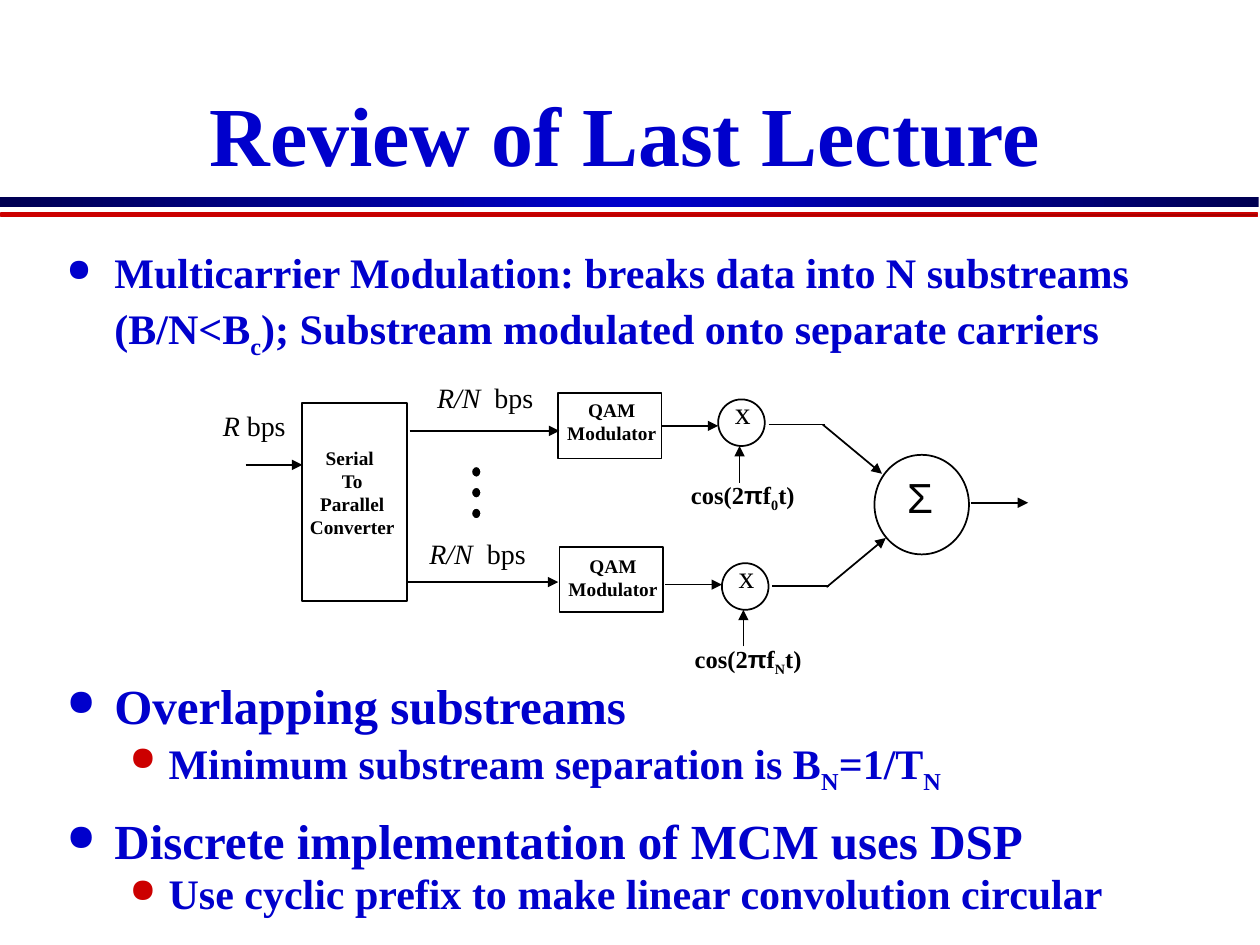
from typing import NamedTuple

from lxml import etree
from pptx import Presentation
from pptx import util as u
from pptx.dml.color import RGBColor
from pptx.enum import shapes, text
from pptx.oxml import ns

I = u.Inches
COLORS = {"blue": "0000CC", "navy": "000052", "red": "CC0000",
          "dark_red": "A30000", "black": "000000", "white": "FFFFFF"}
SERIF, SANS = "Times New Roman", "Arial"
RECT, OVAL = shapes.MSO_SHAPE.RECTANGLE, shapes.MSO_SHAPE.OVAL
CENTER = text.PP_ALIGN.CENTER


class Run(NamedTuple):
    text: str
    sub: bool = False
    italic: bool = False
    font: str = SERIF


class Para(NamedTuple):
    runs: list[Run]
    size: float
    color: str = "black"
    bold: bool = False
    fmt: dict = {}
    bullet: tuple | None = None  # colour, size %, left margin, hanging indent


class Arrow(NamedTuple):
    x1: float
    y1: float
    x2: float
    y2: float
    head: bool = True


def rgb(name: str) -> RGBColor:
    return RGBColor.from_string(COLORS[name])


def add(parent, tag: str, **attrs):
    return etree.SubElement(parent, ns.qn(tag), attrs)


def draw_shape(s, kind, x, y, w, h, line=None, fill=None):
    sp = s.shapes.add_shape(kind, I(x), I(y), I(w), I(h))
    sp.shadow.inherit = False
    if fill:
        sp.fill.solid()
        sp.fill.fore_color.rgb = rgb(fill)
    else:
        sp.fill.background()
    if line:
        sp.line.color.rgb = rgb(line)
        sp.line.width = u.Pt(1)
    else:
        sp.line.fill.background()
    return sp


def fill_gradient(sp, names: list[str]) -> None:
    sp.fill.gradient()
    sp.fill.gradient_angle = 0
    stops = sp.element.spPr.find(".//" + ns.qn("a:gsLst"))
    for gs in list(stops):
        stops.remove(gs)
    for i, name in enumerate(names):
        gs = add(stops, "a:gs", pos=str(100000 * i // (len(names) - 1)))
        add(gs, "a:srgbClr", val=COLORS[name])


def draw_text(s, x, y, w, h, paras: list[Para], wrap=False, anchor=text.MSO_ANCHOR.TOP) -> None:
    tf = s.shapes.add_textbox(I(x), I(y), I(w), I(h)).text_frame
    tf.word_wrap, tf.vertical_anchor = wrap, anchor
    for i, para in enumerate(paras):
        p = tf.paragraphs[0] if i == 0 else tf.add_paragraph()
        for key, value in para.fmt.items():
            setattr(p, key, value)
        if para.bullet:
            color, percent, margin, hang = para.bullet
            pPr = p._p.get_or_add_pPr()
            pPr.set("marL", str(I(margin)))
            pPr.set("indent", str(-I(hang)))
            add(add(pPr, "a:buClr"), "a:srgbClr", val=COLORS[color])
            add(pPr, "a:buSzPct", val=str(percent * 1000))
            add(pPr, "a:buChar", char="●")
        for run in para.runs:
            r = p.add_run()
            r.text = run.text
            fmt = {"name": run.font, "size": u.Pt(para.size),
                   "bold": para.bold, "italic": run.italic}
            for key, value in fmt.items():
                setattr(r.font, key, value)
            r.font.color.rgb = rgb(para.color)
            if run.sub:
                r._r.get_or_add_rPr().set("baseline", "-25000")


def draw_arrow(s, a: Arrow):
    c = s.shapes.add_connector(shapes.MSO_CONNECTOR.STRAIGHT,
                               I(a.x1), I(a.y1), I(a.x2), I(a.y2))
    c.line.color.rgb = rgb("black")
    c.line.width = u.Pt(1)
    if a.head:
        add(c.line._get_or_add_ln(), "a:tailEnd", type="triangle")
    add(c._element.spPr, "a:effectLst")
    return c


def labels(lines: list[str]) -> list[Para]:
    return [Para([Run(t)], 11, bold=True, fmt={"alignment": CENTER}) for t in lines]


def topic(runs: list[Run], size: float, spacing: float, before: float = 0) -> Para:
    fmt = {"line_spacing": spacing, "space_before": u.Pt(before)}
    return Para(runs, size, "blue", True, fmt, ("blue", 75, 0.38, 0.38))


def subtopic(runs: list[Run]) -> Para:
    fmt = {"line_spacing": 0.8, "space_before": u.Pt(4.8), "level": 1}
    return Para(runs, 24, "blue", True, fmt, ("red", 80, 0.81, 0.31))


def main() -> None:
    prs = Presentation()
    prs.slide_width, prs.slide_height = I(10), I(7.5)
    s = prs.slides.add_slide(prs.slide_layouts[6])

    # Double rule under the title
    fill_gradient(draw_shape(s, RECT, 0, 1.56, 9.99, 0.08), ["navy", "blue", "navy"])
    fill_gradient(draw_shape(s, RECT, 0.01, 1.69, 9.97, 0.03, "red"), ["red", "dark_red"])

    # Title and bullet text
    title = Para([Run("Review of Last Lecture")], 48, "blue", True,
                 {"alignment": CENTER, "line_spacing": 0.8})
    draw_text(s, 0.67, 0.25, 8.58, 1.25, [title], True, text.MSO_ANCHOR.BOTTOM)
    draw_text(s, 0.43, 1.87, 9.08, 1.05, [
        topic([Run("Multicarrier Modulation: breaks data into N substreams (B/N<B"),
               Run("c", sub=True),
               Run("); Substream modulated onto separate carriers")], 24, 1.1)], True)
    draw_text(s, 0.43, 5.22, 9.08, 2.1, [
        topic([Run("Overlapping substreams")], 28, 1.2),
        subtopic([Run("Minimum substream separation is B"), Run("N", sub=True),
                  Run("=1/T"), Run("N", sub=True)]),
        topic([Run("Discrete implementation of MCM uses DSP")], 28, 1.2, 5.6),
        subtopic([Run("Use cyclic prefix to make linear convolution circular")])], True)

    # Serial to parallel converter
    draw_shape(s, RECT, 2.4, 3.2, 0.83, 1.57, "black")
    draw_text(s, 2.34, 3.49, 0.91, 1.2, labels(["Serial ", "To", "Parallel", "Converter"]))

    # Ellipsis between the branches
    for i in range(3):
        draw_shape(s, OVAL, 3.74, 3.7 + i * 0.165, 0.08, 0.09, "white", "black")

    # QAM modulators
    modulators = []
    for x, y, label_y in [(4.43, 3.12, 3.11), (4.44, 4.34, 4.35)]:
        modulators.append(draw_shape(s, RECT, x, y, 0.82, 0.52, "black"))
        draw_text(s, x - 0.05, label_y, 0.95, 0.67, labels(["QAM", "Modulator"]))

    # Mixers with their carriers
    for x, y, index in [(5.7, 3.17, "0"), (5.73, 4.47, "N")]:
        draw_shape(s, OVAL, x, y, 0.37, 0.37, "black")
        draw_text(s, x + 0.035, y - 0.1, 0.34, 0.58, [Para([Run("x")], 18)])
        draw_arrow(s, Arrow(x + 0.17, y + 0.66, x + 0.17, y + 0.37))
        carrier = [Run("cos(2"), Run("π", font=SANS), Run("f"),
                   Run(index, sub=True), Run("t)")]
        draw_text(s, x - 0.315, y + 0.59, 1.05, 0.48, [Para(carrier, 14, bold=True)])

    # Summing node
    draw_shape(s, OVAL, 6.94, 3.61, 0.75, 0.79, "black")
    draw_text(s, 7.1, 3.69, 0.42, 0.72, [Para([Run("Σ", font=SANS)], 24)])

    # Signal paths
    for a in [Arrow(1.95, 3.69, 2.4, 3.69), Arrow(3.25, 3.42, 4.44, 3.42),
              Arrow(3.24, 4.62, 4.43, 4.62), Arrow(5.28, 4.64, 5.73, 4.64),
              Arrow(6.1, 3.37, 6.55, 3.37, False), Arrow(6.13, 4.65, 6.58, 4.65, False),
              Arrow(6.53, 3.37, 7, 3.76), Arrow(6.56, 4.66, 7.03, 4.27),
              Arrow(7.71, 3.99, 8.16, 3.99)]:
        draw_arrow(s, a)
    draw_arrow(s, Arrow(5.25, 3.38, 5.7, 3.38)).begin_connect(modulators[0], 3)

    # Data rates
    for x, y, w, rate, unit in [(1.67, 3.19, 0.73, "R", " bps"),
                                (3.37, 2.97, 1.01, "R/N", "  bps"),
                                (3.31, 4.21, 1.01, "R/N", "  bps")]:
        draw_text(s, x, y, w, 0.53, [Para([Run(rate, italic=True), Run(unit)], 16)])

    prs.save("out.pptx")


if __name__ == "__main__":
    main()
